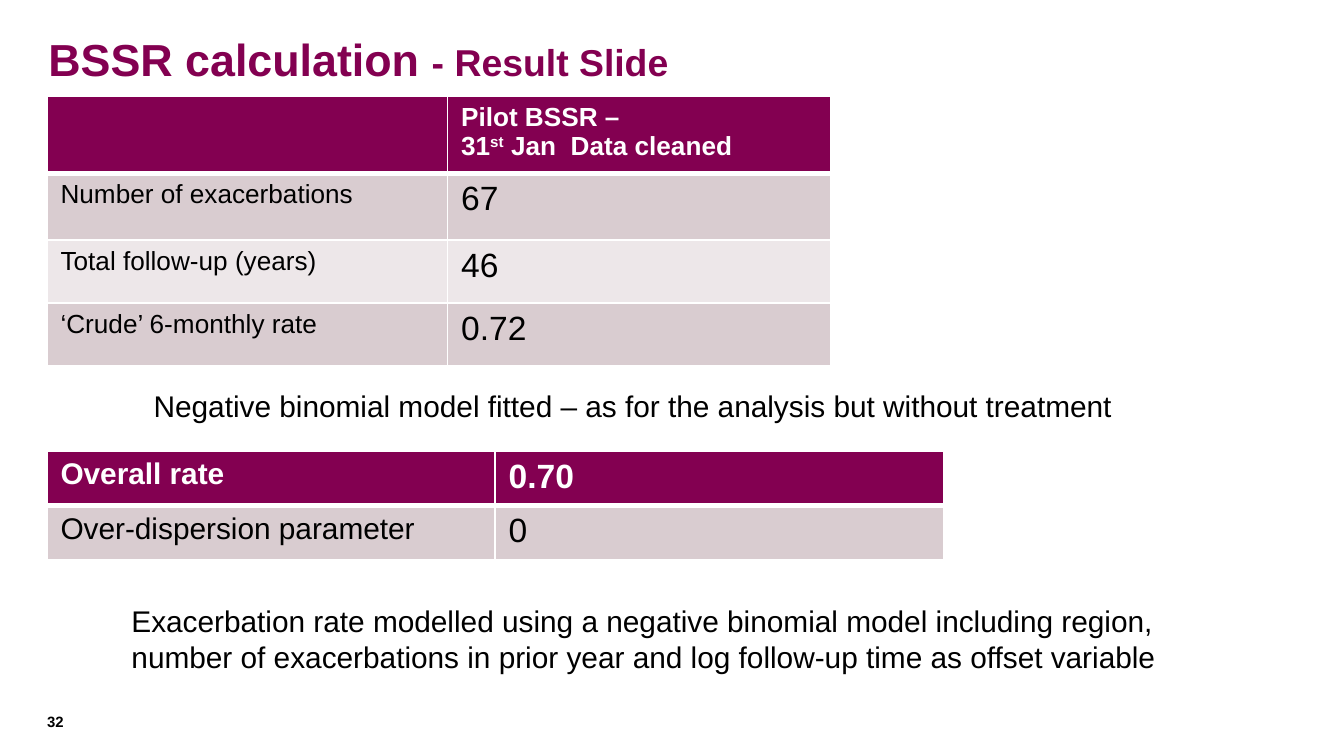
import lxml.etree
import pptx
import pptx.dml.color
import pptx.enum.text
import pptx.oxml.ns
import pptx.util
from pptx.util import Cm

PLUM, ROSE, PALE, WHITE, BLACK = "830051", "D9CCD0", "EDE7E9", "FFFFFF", "000000"
LEFT = Cm(0.89)


def color(value):
    """Turn a hex string into a colour."""
    return pptx.dml.color.RGBColor.from_string(value)


def format_paragraph(paragraph, size, value=BLACK, bold=False):
    """Set the font that a whole paragraph shares."""
    font = paragraph.font
    font.name, font.size, font.bold = "Arial", pptx.util.Pt(size), bold
    font.color.rgb = color(value)


def place(shape, left, top, width, height):
    """Move and size a shape."""
    shape.left, shape.top, shape.width, shape.height = left, top, width, height


def fill_title(shape, main, detail):
    """Write the title with a smaller second part."""
    place(shape, Cm(0.66), Cm(0.41), Cm(24.36), Cm(1.4))
    shape.text_frame.vertical_anchor = pptx.enum.text.MSO_ANCHOR.MIDDLE
    paragraph = shape.text_frame.paragraphs[0]
    paragraph.alignment = pptx.enum.text.PP_ALIGN.LEFT
    paragraph.add_run().text = main
    run = paragraph.add_run()
    run.text = detail
    run.font.size = pptx.util.Pt(20)
    format_paragraph(paragraph, 24, PLUM, True)


def fill_body(shape, text):
    """Write the indented closing paragraph without a bullet."""
    place(shape, Cm(1.73), Cm(11.25), Cm(20.85), Cm(1.7))
    shape.text_frame.text = text
    paragraph = shape.text_frame.paragraphs[0]
    paragraph.space_before = pptx.util.Pt(0)
    properties = paragraph._p.get_or_add_pPr()
    properties.set("marL", str(Cm(0.5)))
    properties.set("indent", "0")
    lxml.etree.SubElement(properties, pptx.oxml.ns.qn("a:buNone"))
    format_paragraph(paragraph, 16)


def add_text(slide, text, box, size, bold=False, centred=False, margin=None):
    """Add a one-paragraph text box."""
    shape = slide.shapes.add_textbox(*box)
    frame = shape.text_frame
    frame.word_wrap = True
    if margin is not None:
        frame.margin_left = frame.margin_right = margin
        frame.margin_top = frame.margin_bottom = margin
    frame.text = text
    if centred:
        frame.paragraphs[0].alignment = pptx.enum.text.PP_ALIGN.CENTER
    format_paragraph(frame.paragraphs[0], size, bold=bold)


def style_cell(cell, value, bottom):
    """Give a cell white borders and a fill."""
    properties = cell._tc.get_or_add_tcPr()
    for side, width in (("L", 1), ("R", 1), ("T", 1), ("B", bottom)):
        line = lxml.etree.SubElement(properties, pptx.oxml.ns.qn(f"a:ln{side}"))
        line.set("w", str(pptx.util.Pt(width)))
        solid = lxml.etree.SubElement(line, pptx.oxml.ns.qn("a:solidFill"))
        lxml.etree.SubElement(solid, pptx.oxml.ns.qn("a:srgbClr")).set("val", WHITE)
    cell.fill.solid()
    cell.fill.fore_color.rgb = color(value)


def add_result_table(slide, top, widths, heights, rows, label_size):
    """Add a table with a plum header row and banded rows below."""
    shape = slide.shapes.add_table(
        len(rows), len(widths), LEFT, top, sum(widths), sum(heights))
    table = shape.table
    table.first_row = table.horz_banding = False
    for column, width in zip(table.columns, widths):
        column.width = width
    for index, (row, height, texts) in enumerate(zip(table.rows, heights, rows)):
        row.height = height
        header = index == 0
        band = PLUM if header else (PALE, ROSE)[index % 2]
        for cell, text, size in zip(row.cells, texts, (label_size, 18)):
            style_cell(cell, band, 3 if header else 1)
            cell.text = text
            format_paragraph(cell.text_frame.paragraphs[0], size,
                             WHITE if header else BLACK, header)
    return table


def fill_date_header(cell):
    """Write the two-line header with its raised ordinal."""
    first = cell.text_frame.paragraphs[0]
    first.text = "Pilot BSSR –"
    second = cell.text_frame.add_paragraph()
    for text, baseline in (("31", 0), ("st", 30000), (" Jan  Data cleaned", 0)):
        run = second.add_run()
        run.text = text
        if baseline:
            run._r.get_or_add_rPr().set("baseline", str(baseline))
    for paragraph in (first, second):
        format_paragraph(paragraph, 14, WHITE, True)


def main():
    """Build and save the slide."""
    presentation = pptx.Presentation()
    presentation.slide_width, presentation.slide_height = Cm(25.4), Cm(14.28)
    slide = presentation.slides.add_slide(presentation.slide_layouts[1])
    fill_title(slide.shapes.title, "BSSR calculation ", "- Result Slide")
    fill_body(slide.placeholders[1],
              "Exacerbation rate modelled using a negative binomial model including "
              "region, number of exacerbations in prior year and log follow-up time "
              "as offset variable")
    table = add_result_table(
        slide, Cm(1.81), [Cm(7.57), Cm(7.24)],
        [Cm(1.46), Cm(1.26), Cm(1.19), Cm(1.19)],
        [("", ""), ("Number of exacerbations", "67"),
         ("Total follow-up (years)", "46"), ("‘Crude’ 6-monthly rate", "0.72")], 14)
    fill_date_header(table.cell(0, 1))
    add_text(slide,
             "Negative binomial model fitted – as for the analysis but without treatment",
             (Cm(0.66), Cm(7.19), Cm(22.61), Cm(1.35)), 16, centred=True)
    add_result_table(
        slide, Cm(8.52), [Cm(8.47)] * 2, [Cm(1.03)] * 2,
        [("Overall rate", "0.70"), ("Over-dispersion parameter", "0")], 16)
    add_text(slide, "32", (LEFT, Cm(13.46), Cm(1.09), Cm(0.46)), 8,
             bold=True, margin=0)
    presentation.save("out.pptx")


if __name__ == "__main__":
    main()
